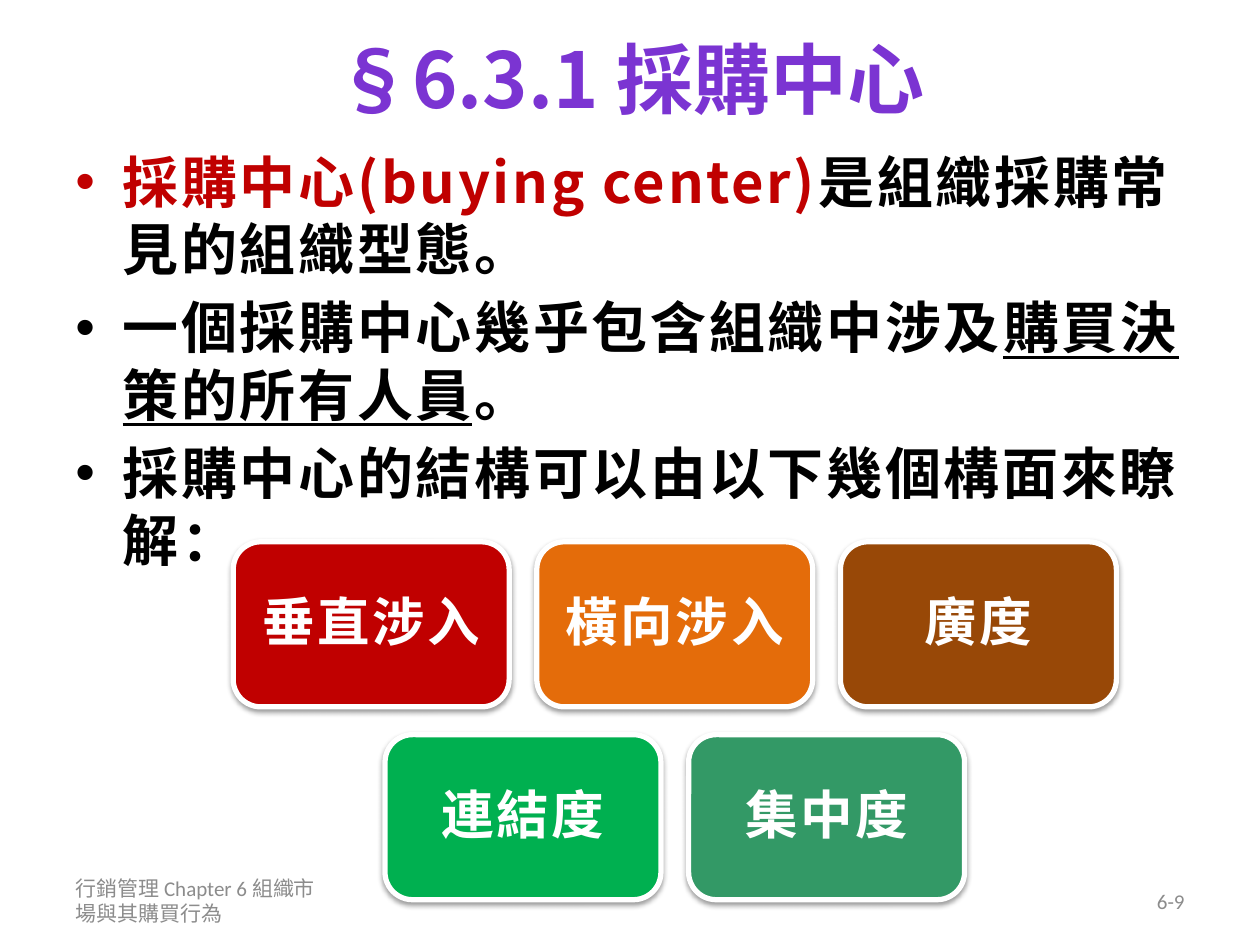
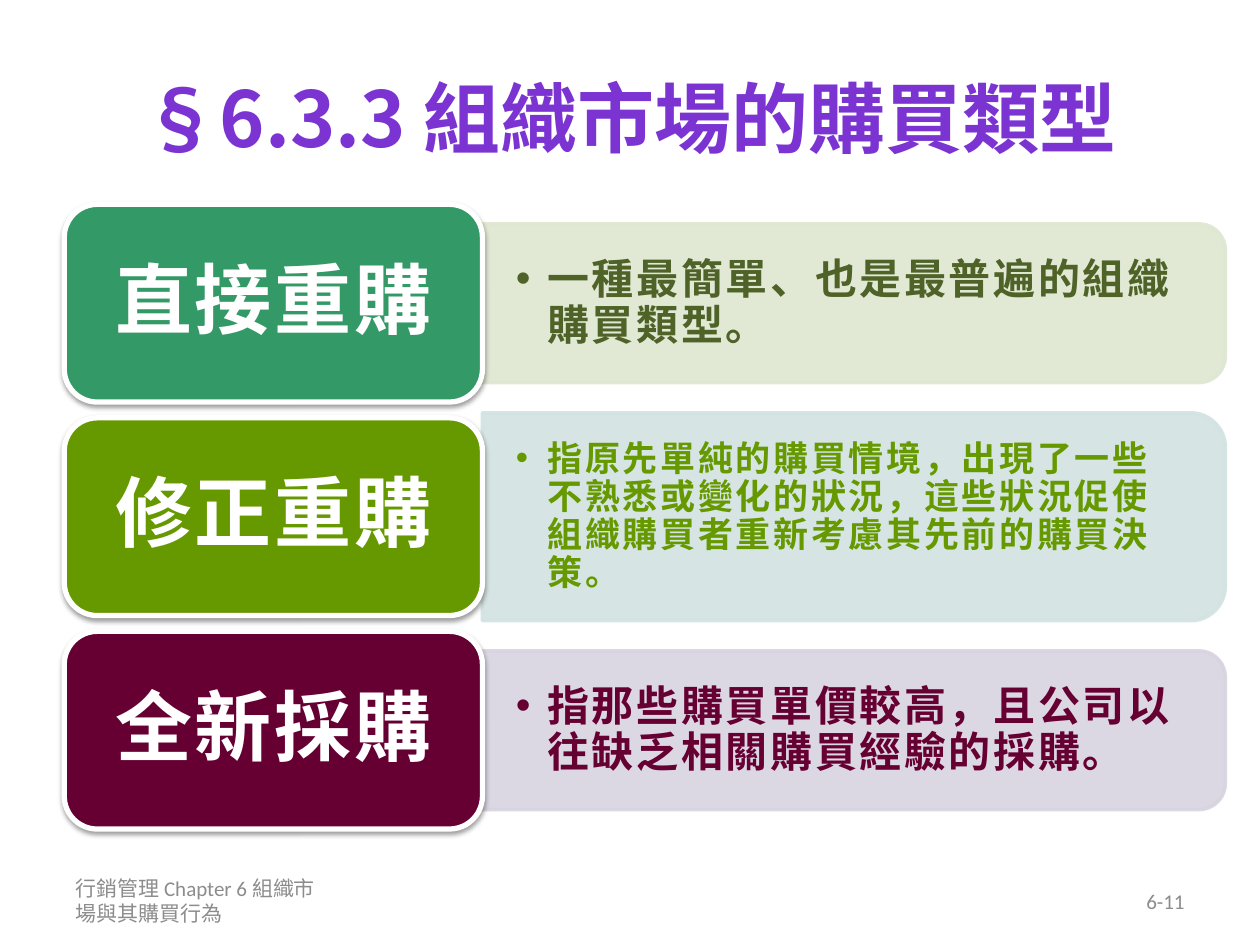
from lxml import etree
from pptx import Presentation
from pptx.dml.color import RGBColor
from pptx.enum.shapes import MSO_SHAPE
from pptx.enum.text import MSO_ANCHOR, PP_ALIGN
from pptx.oxml.ns import qn
from pptx.util import Pt

ROUND = MSO_SHAPE.ROUNDED_RECTANGLE
TAB = MSO_SHAPE.ROUND_2_SAME_RECTANGLE
TOP, MIDDLE = MSO_ANCHOR.TOP, MSO_ANCHOR.MIDDLE
LEFT, CENTER, RIGHT = PP_ALIGN.LEFT, PP_ALIGN.CENTER, PP_ALIGN.RIGHT

WHITE = RGBColor(0xFF, 0xFF, 0xFF)
BLACK = RGBColor(0, 0, 0)
GRAY = RGBColor(0x8C, 0x8C, 0x8C)
PURPLE = RGBColor(0x7B, 0x34, 0xD2)
RED = RGBColor(0xC0, 0, 0)
ORANGE = RGBColor(0xE4, 0x6C, 0x0A)
BROWN = RGBColor(0x98, 0x48, 0x07)
GREEN = RGBColor(0, 0xB0, 0x50)
JADE = RGBColor(0x33, 0x99, 0x66)
LIME = RGBColor(0x66, 0x99, 0)
WINE = RGBColor(0x66, 0, 0x33)
OLIVE = RGBColor(0x4F, 0x62, 0x28)
PALE_OLIVE = RGBColor(0xDE, 0xE7, 0xD1)
PALE_TEAL = RGBColor(0xD2, 0xE3, 0xE2)
PALE_PLUM = RGBColor(0xD8, 0xD3, 0xE0)

SANS = "Noto Sans CJK SC"
PLAIN = "Calibri"
FOOTER = "行銷管理 Chapter 6 組織市場與其購買行為"


def add(parent, tag, **attrs):
    return etree.SubElement(parent, qn(tag), attrs)


class Deck:
    def __init__(self):
        self.prs = Presentation()
        self.prs.slide_width, self.prs.slide_height = Pt(720), Pt(540)
        self.slide = None

    def page(self, title, top, number):
        self.slide = self.prs.slides.add_slide(self.prs.slide_layouts[6])
        self.line(self.box(36, top, 648, 89), title, 44, PURPLE, CENTER)
        foot = self.box(36, 500.4, 168, 28.8, (7.2, 3.6, 14, 3.6))
        self.line(foot, FOOTER, 12, GRAY, LEFT, PLAIN)
        self.line(self.box(516, 500.4, 168, 28.8), number, 12, GRAY, RIGHT, PLAIN)

    def frame(self, shape, pads, anchor=MIDDLE):
        frame = shape.text_frame
        frame.word_wrap = True
        frame.vertical_anchor = anchor
        (frame.margin_left, frame.margin_top,
         frame.margin_right, frame.margin_bottom) = map(Pt, pads)
        return frame

    def box(self, x, y, w, h, pads=(7.2, 3.6, 7.2, 3.6), anchor=MIDDLE):
        shape = self.slide.shapes.add_textbox(Pt(x), Pt(y), Pt(w), Pt(h))
        return self.frame(shape, pads, anchor)

    def style(self, para, size, color, face=SANS, gap=0):
        font = para.font
        font.size, font.name, font.bold = Pt(size), face, face == SANS
        font.color.rgb = color
        props = para._p.pPr.find(qn("a:defRPr"))
        add(props, "a:ea", typeface=SANS)
        if gap:
            props.set("spc", str(gap))

    def line(self, frame, text, size, color, align, face=SANS, gap=0):
        para = frame.paragraphs[0]
        para.text, para.alignment = text, align
        self.style(para, size, color, face, gap)
        return para

    def bullet(self, para, runs, size, color, indent, lead):
        props = para._p.get_or_add_pPr()
        props.set("marL", str(Pt(indent)))
        props.set("indent", str(-Pt(indent)))
        para.line_spacing = Pt(size * lead)
        add(props, "a:buFont", typeface="Arial")
        add(props, "a:buChar", char="•")
        self.style(para, size, color, gap=150)
        for text, tint, under in runs:
            run = para.add_run()
            run.text = text
            if tint:
                run.font.color.rgb = tint
            if under:
                run.font.underline = True

    def body(self, items):
        frame = self.box(36, 77, 648, 266.4, (7.2, 7.2, 7.2, 3.6), TOP)
        for i, runs in enumerate(items):
            para = frame.add_paragraph() if i else frame.paragraphs[0]
            if i:
                para.space_before = Pt(6.4)
            self.bullet(para, runs, 32, BLACK, 27, 1.2)

    def card(self, x, y, w, h, text, size, fill, pads):
        shape = self.slide.shapes.add_shape(ROUND, Pt(x), Pt(y), Pt(w), Pt(h))
        shape.fill.solid()
        shape.fill.fore_color.rgb = fill
        shape.line.color.rgb = WHITE
        shape.line.width = Pt(3)
        glow = add(add(shape._element.spPr, "a:effectLst"), "a:outerShdw",
                   blurRad=str(Pt(3.1)), dist=str(Pt(1.6)), dir="5400000",
                   rotWithShape="0")
        add(add(glow, "a:srgbClr", val="000000"), "a:alpha", val="38000")
        para = self.line(self.frame(shape, pads), text, size, WHITE, CENTER, gap=150)
        para.line_spacing = 0.9

    def panel(self, x, mid, w, h, text, size, color, fill):
        shape = self.slide.shapes.add_shape(
            TAB, Pt(x + (w - h) / 2), Pt(mid - w / 2), Pt(h), Pt(w))
        shape.rotation = 90
        shape.shadow.inherit = False
        shape.fill.solid()
        shape.fill.fore_color.rgb = fill
        shape.line.color.rgb = fill
        shape.line.width = Pt(2)
        for tint in shape._element.spPr.iter(qn("a:srgbClr")):
            add(tint, "a:alpha", val="90000")
        frame = self.box(x, mid - h * 0.45, w - h * 0.05, h * 0.9,
                         (19.2, 9.6, 19.2, 9.6))
        self.bullet(frame.paragraphs[0], [(text, None, False)], size, color, 18, 1.08)


def center(deck):
    deck.page("§6.3.1 採購中心", 0, "6-9")
    deck.body([
        [("採購中心(buying center)", RED, False),
         ("是組織採購常見的組織型態。", None, False)],
        [("一個採購中心幾乎包含組織中涉及", None, False),
         ("購買決策的所有人員", None, True), ("。", None, False)],
        [("採購中心的結構可以由以下幾個構面來瞭解：", None, False)],
    ])
    rows = [
        [("垂直涉入", RED), ("橫向涉入", ORANGE), ("廣度", BROWN)],
        [("連結度", GREEN), ("集中度", JADE)],
    ]
    wide, high, step = 157.7, 94.3, 173.5
    for i, row in enumerate(rows):
        left = 385.6 - ((len(row) - 1) * step + wide) / 2
        for j, (text, fill) in enumerate(row):
            deck.card(left + j * step, 309.6 + i * 110.2, wide, high,
                      text, 30, fill, (8.6,) * 4)


def types(deck):
    deck.page("§6.3.3 組織市場的購買類型", 22, "6-11")
    rows = [
        ("直接重購", JADE, "一種最簡單、也是最普遍的組織購買類型。",
         24, OLIVE, PALE_OLIVE, 90.7),
        ("修正重購", LIME,
         "指原先單純的購買情境，出現了一些不熟悉或變化的狀況，"
         "這些狀況促使組織購買者重新考慮其先前的購買決策。",
         20, LIME, PALE_TEAL, 118.8),
        ("全新採購", WINE, "指那些購買單價較高，且公司以往缺乏相關購買經驗的採購。",
         24, WINE, PALE_PLUM, 90.7),
    ]
    for i, (name, fill, text, size, color, pale, high) in enumerate(rows):
        mid = 173.3 + i * 122
        deck.panel(275.6, mid, 424.6, high, text, size, color, pale)
        deck.card(36.7, mid - 56.5, 239, 113, name, 44, fill, (13, 6.5, 13, 6.5))


def main():
    deck = Deck()
    center(deck)
    types(deck)
    deck.prs.save("out.pptx")


if __name__ == "__main__":
    main()
